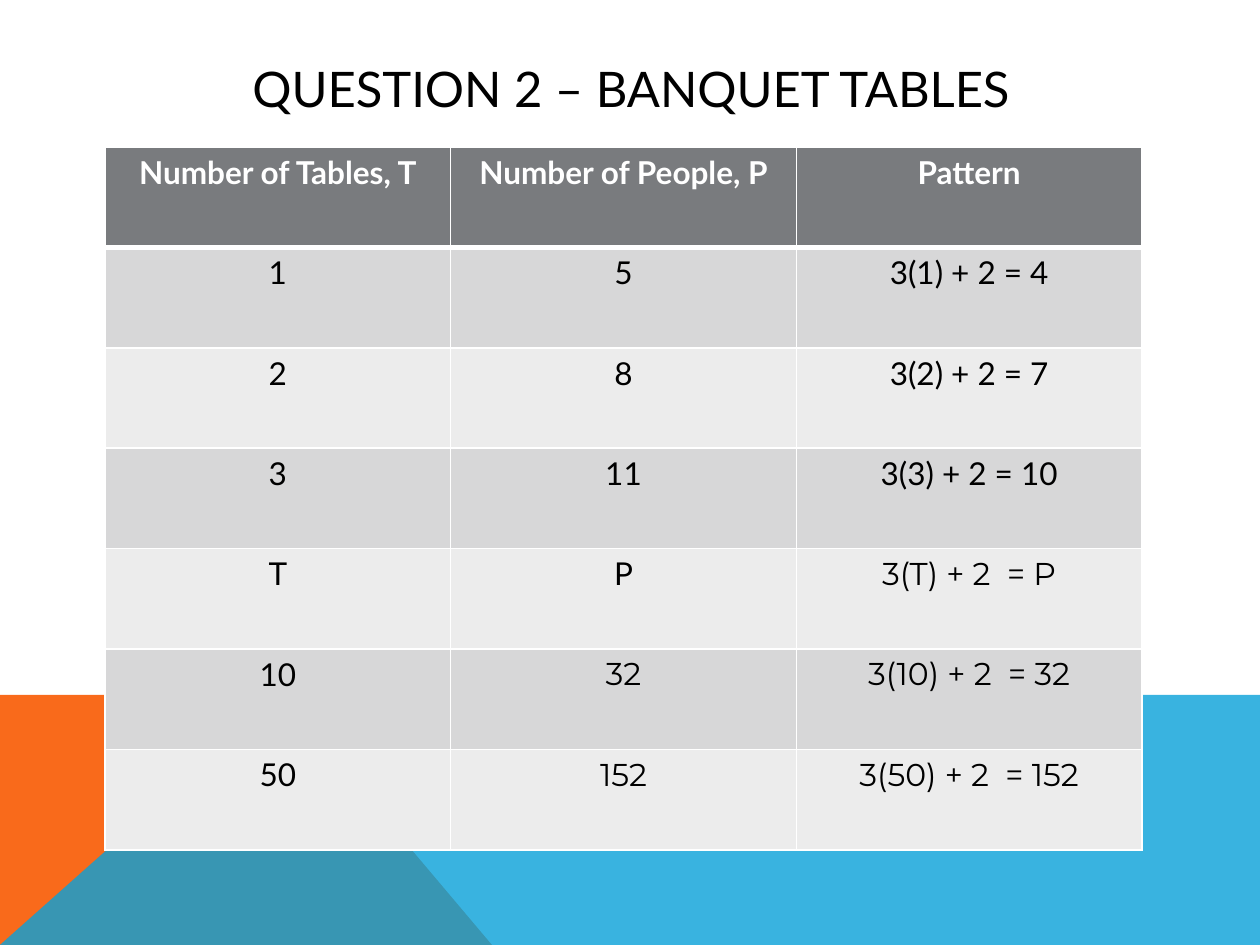
import pptx
import pptx.dml.color
import pptx.enum.text
import pptx.oxml
import pptx.oxml.ns
import pptx.util

PX = 914400 / 126
WIDTH, HEIGHT = 1260, 945
BAND_TOP = 695
FOLD_X = 281
WHITE, BLACK = "FFFFFF", "000000"
HEADER_FILL = "797B7E"
ROW_FILLS = ("D7D7D8", "ECECEC")
LATO, MONTSERRAT = "Lato", "Montserrat"

HEADINGS = ("Number of Tables, T", "Number of People, P", "Pattern")
ROWS = (
    ("1", "5", "3(1) + 2 = 4"),
    ("2", "8", "3(2) + 2 = 7"),
    ("3", "11", "3(3) + 2 = 10"),
    ("T", "P", "3(T) + 2  = P"),
    ("10", "32", "3(10) + 2  = 32"),
    ("50", "152", "3(50) + 2  = 152"),
)
# First column set in Montserrat, by body row; the other rows are all Lato.
MONTSERRAT_FROM = {4: 2, 5: 1, 6: 1}


def px(length):
    return pptx.util.Emu(round(length * PX))


def rgb(value):
    return pptx.dml.color.RGBColor.from_string(value)


def write(frame, text, color, **font_values):
    """Put one centred line of text in a frame."""
    para = frame.paragraphs[0]
    para.alignment = pptx.enum.text.PP_ALIGN.CENTER
    span = para.add_run()
    span.text = text
    span.font.color.rgb = rgb(color)
    for name, value in font_values.items():
        setattr(span.font, name, value)


def add_polygon(page, points, color, opacity=100):
    builder = page.shapes.build_freeform(*points[0], scale=PX)
    builder.add_line_segments(points[1:], close=True)
    shape = builder.convert_to_shape()
    shape.shadow.inherit = False
    shape.fill.solid()
    shape.fill.fore_color.rgb = rgb(color)
    shape.line.fill.background()
    if opacity < 100:
        tint = next(shape.fill._xPr.iter(pptx.oxml.ns.qn("a:srgbClr")))
        tint.append(pptx.oxml.parse_xml(
            f'<a:alpha {pptx.oxml.ns.nsdecls("a")} val="{opacity * 1000}"/>'))


def add_title(page, text):
    box = page.shapes.add_textbox(px(113), px(50), px(1036), px(76))
    frame = box.text_frame
    frame.word_wrap = True
    frame.vertical_anchor = pptx.enum.text.MSO_ANCHOR.MIDDLE
    write(frame, text, BLACK, name=LATO, size=pptx.util.Pt(28))


def set_borders(cell, widths):
    """Draw white borders, given a width in points for each side."""
    properties = cell._tc.get_or_add_tcPr()
    for position, (side, width) in enumerate(widths.items()):
        properties.insert(position, pptx.oxml.parse_xml(
            f'<a:ln{side} {pptx.oxml.ns.nsdecls("a")} w="{width * 12700}">'
            f'<a:solidFill><a:srgbClr val="{WHITE}"/></a:solidFill>'
            f'</a:ln{side}>'))


def fill_cell(cell, text, row, column):
    header = row == 0
    cell.fill.solid()
    cell.fill.fore_color.rgb = rgb(HEADER_FILL if header else ROW_FILLS[(row - 1) % 2])
    set_borders(cell, {"L": 1, "R": 1, "T": 3 if row == 1 else 1, "B": 3 if header else 1})
    montserrat = column >= MONTSERRAT_FROM.get(row, len(HEADINGS))
    write(cell.text_frame, text, WHITE if header else BLACK,
          name=MONTSERRAT if montserrat else LATO, size=pptx.util.Pt(18), bold=header)


def add_pattern_table(page):
    content = (HEADINGS, *ROWS)
    width, height = px(1037), px(703)
    table = page.shapes.add_table(
        len(content), len(HEADINGS), px(105), px(147), width, height).table
    table.first_row = True
    table.horz_banding = False
    for column in table.columns:
        column.width = width // len(HEADINGS)
    for row, texts in enumerate(content):
        table.rows[row].height = height // len(content)
        for column, text in enumerate(texts):
            fill_cell(table.cell(row, column), text, row, column)


def main():
    deck = pptx.Presentation()
    deck.slide_width, deck.slide_height = px(WIDTH), px(HEIGHT)
    page = deck.slides.add_slide(deck.slide_layouts[6])
    add_polygon(page, [(0, HEIGHT), (0, BAND_TOP), (FOLD_X, BAND_TOP), (492, HEIGHT)],
                "F96A1B")
    add_polygon(page, [(0, HEIGHT), (FOLD_X, BAND_TOP), (WIDTH, BAND_TOP), (WIDTH, HEIGHT)],
                "08A1D9", opacity=80)
    add_title(page, "QUESTION 2 – BANQUET TABLES")
    add_pattern_table(page)
    deck.save("out.pptx")


if __name__ == "__main__":
    main()
